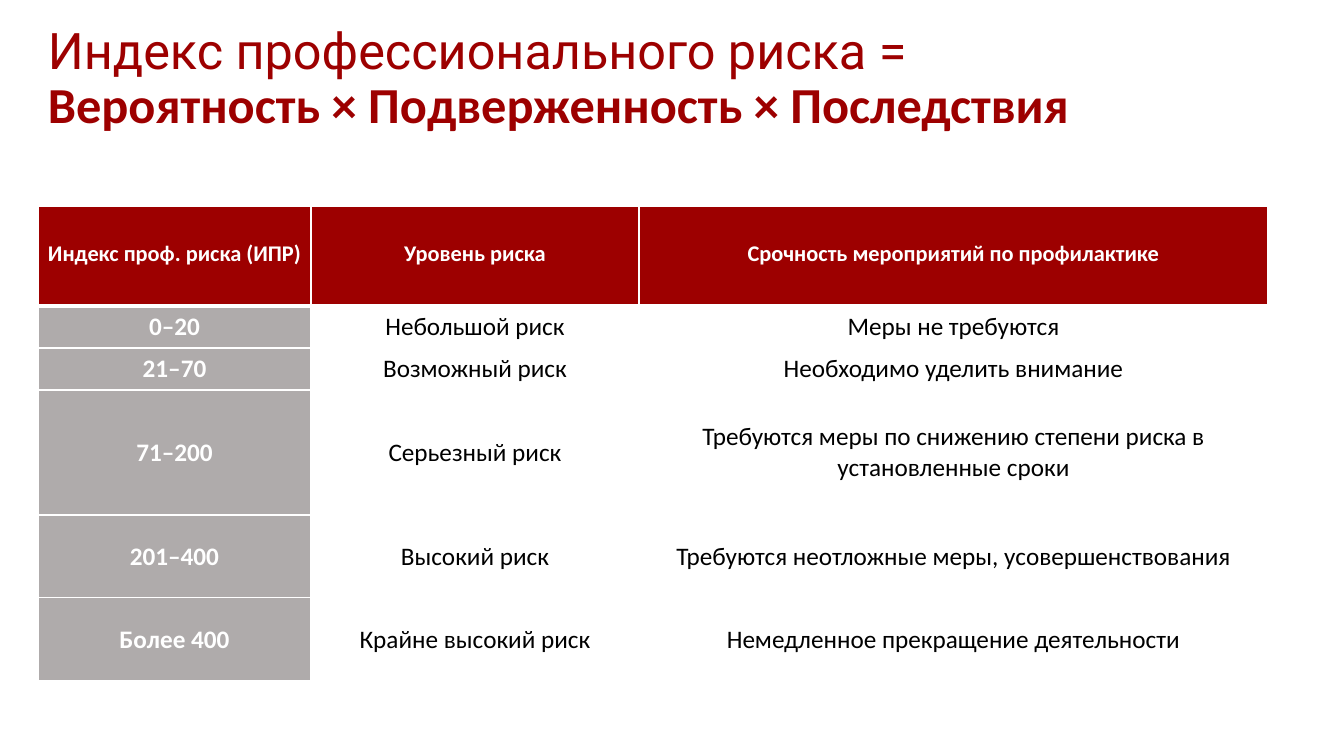
import pptx
import pptx.dml.color
import pptx.enum.text
import pptx.oxml
import pptx.oxml.ns
import pptx.util

EMU_PER_PX = 914400 / 100.8
RED = "9D0000"
GREY = "AFABAB"
WHITE = "FFFFFF"
BLACK = "000000"

COLUMN_WIDTHS = [273, 328, 629]
ROW_HEIGHTS = [100, 42, 42, 125, 83, 83]
RISK_ROWS = [
    ["Индекс проф. риска (ИПР)", "Уровень риска", "Срочность мероприятий по профилактике"],
    ["0–20", "Небольшой риск", "Меры не требуются"],
    ["21–70", "Возможный риск", "Необходимо уделить внимание"],
    ["71–200", "Серьезный риск", "Требуются меры по снижению степени риска в установленные сроки"],
    ["201–400", "Высокий риск", "Требуются неотложные меры, усовершенствования"],
    ["Более 400", "Крайне высокий риск", "Немедленное прекращение деятельности"],
]


def px(length):
    return pptx.util.Emu(round(length * EMU_PER_PX))


def color(value):
    return pptx.dml.color.RGBColor.from_string(value)


def set_font(font, name, size, value, bold):
    font.name = name
    font.size = pptx.util.Pt(size)
    font.color.rgb = color(value)
    font.bold = bold


def set_borders(cell, widths):
    properties = cell._tc.get_or_add_tcPr()
    for index, (side, width) in enumerate(widths.items()):
        line = pptx.oxml.parse_xml(
            f'<a:ln{side} {pptx.oxml.ns.nsdecls("a")} w="{pptx.util.Pt(width)}">'
            f'<a:solidFill><a:srgbClr val="{WHITE}"/></a:solidFill></a:ln{side}>'
        )
        properties.insert(index, line)


def add_title(slide, left, top, width, height):
    shape = slide.shapes.add_textbox(px(left), px(top), px(width), px(height))
    frame = shape.text_frame
    frame.word_wrap = True
    frame.margin_top = frame.margin_bottom = 0
    paragraph = frame.paragraphs[0]
    paragraph.line_spacing = 0.9
    subject = paragraph.add_run()
    subject.text = "Индекс профессионального риска ="
    set_font(subject.font, "Roboto", 36, RED, False)
    paragraph.add_line_break()
    formula = paragraph.add_run()
    formula.text = "Вероятность × Подверженность × Последствия"
    set_font(formula.font, "Calibri", 36, RED, True)


def fill_cell(cell, text, is_header, is_index):
    cell.fill.solid()
    cell.fill.fore_color.rgb = color(RED if is_header else GREY if is_index else WHITE)
    cell.vertical_anchor = pptx.enum.text.MSO_ANCHOR.MIDDLE
    cell.margin_left = cell.margin_right = px(7)
    cell.margin_top = cell.margin_bottom = 0
    cell.text = text
    paragraph = cell.text_frame.paragraphs[0]
    paragraph.alignment = pptx.enum.text.PP_ALIGN.CENTER
    if is_header:
        paragraph.line_spacing = pptx.util.Pt(16.1)
    emphasized = is_header or is_index
    set_font(paragraph.font, "Calibri", 16 if is_header else 18,
             WHITE if emphasized else BLACK, emphasized)


def add_risk_table(slide, left, top, width, height):
    table = slide.shapes.add_table(
        len(RISK_ROWS), len(COLUMN_WIDTHS), px(left), px(top), px(width), px(height)
    ).table
    for column, column_width in zip(table.columns, COLUMN_WIDTHS):
        column.width = px(column_width)
    for row, row_height in zip(table.rows, ROW_HEIGHTS):
        row.height = px(row_height)
    for row_index, texts in enumerate(RISK_ROWS):
        for column_index, text in enumerate(texts):
            cell = table.cell(row_index, column_index)
            fill_cell(cell, text, row_index == 0, column_index == 0)
            set_borders(cell, {"L": 1, "R": 1, "T": 3 if row_index == 1 else 1,
                               "B": 3 if row_index == 0 else 1})


def main():
    presentation = pptx.Presentation()
    presentation.slide_width = px(1344)
    presentation.slide_height = px(756)
    slide = presentation.slides.add_slide(presentation.slide_layouts[6])
    add_title(slide, 38, 26, 1230, 154)
    add_risk_table(slide, 38, 206, sum(COLUMN_WIDTHS), sum(ROW_HEIGHTS))
    presentation.save("out.pptx")


if __name__ == "__main__":
    main()
